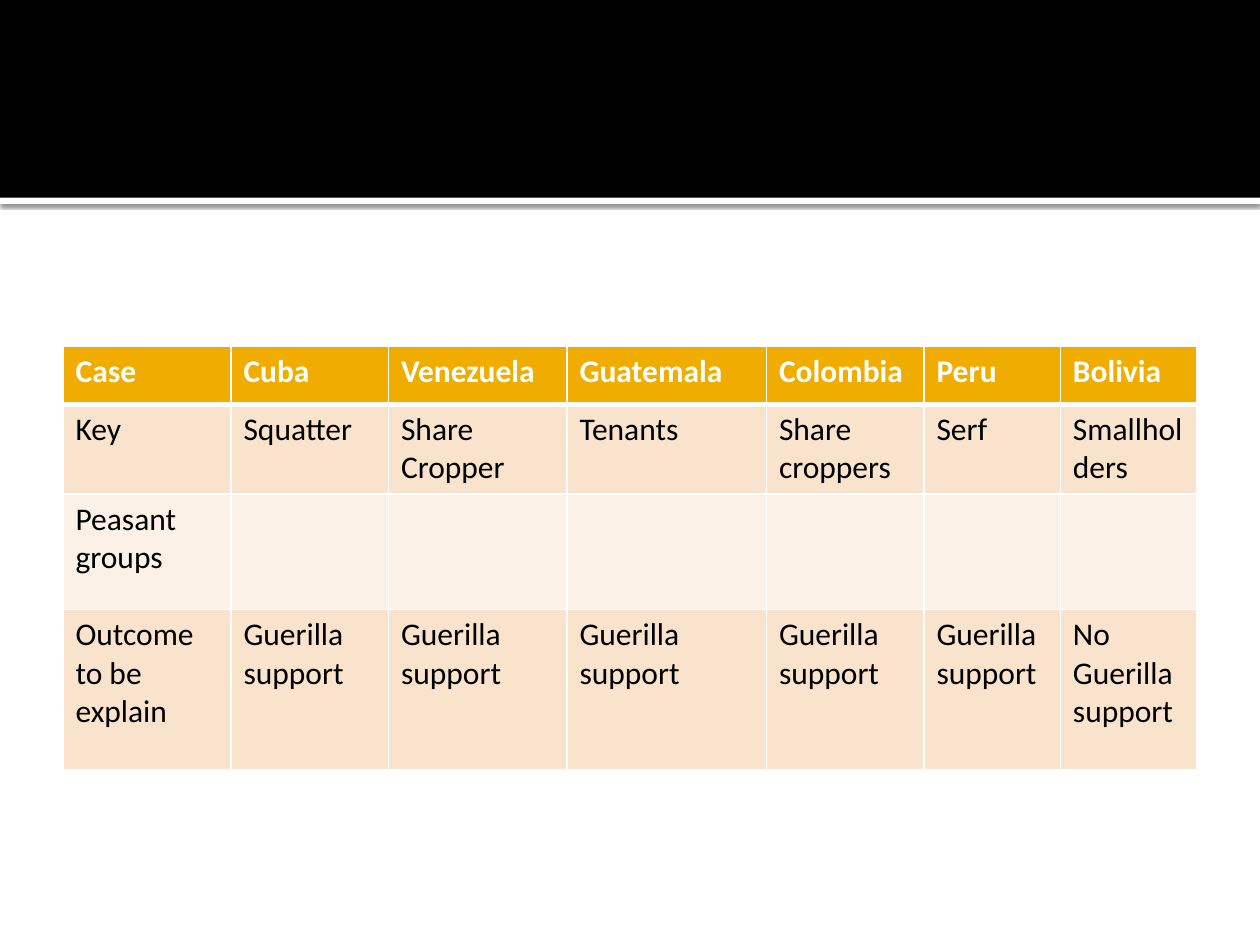
from lxml.etree import SubElement
from pptx import Presentation
from pptx.dml.color import RGBColor
from pptx.enum.shapes import MSO_SHAPE
from pptx.oxml.ns import qn
from pptx.util import Pt

WHITE = RGBColor(0xFF, 0xFF, 0xFF)
BLACK = RGBColor(0x00, 0x00, 0x00)
AMBER = RGBColor(0xF0, 0xAD, 0x00)
PEACH = RGBColor(0xF9, 0xE3, 0xCC)
CREAM = RGBColor(0xFC, 0xF1, 0xE7)

SUPPORT = "Guerilla\nsupport"
ROWS = [
    ["Case", "Cuba", "Venezuela", "Guatemala", "Colombia", "Peru", "Bolivia"],
    ["Key", "Squatter", "Share\nCropper", "Tenants", "Share\ncroppers", "Serf", "Smallholders"],
    ["Peasant\ngroups"] + [""] * 6,
    ["Outcome\nto be\nexplain"] + [SUPPORT] * 5 + ["No\n" + SUPPORT],
]
COL_WIDTHS = [96, 90, 102, 114, 90, 78, 78]
ROW_HEIGHTS = [33, 50.4, 66, 91.8]
ROW_FILLS = [AMBER, PEACH, CREAM, PEACH]


def add_bar(slide, x, y, w, h, color):
    """Add a plain filled rectangle."""
    s = slide.shapes.add_shape(MSO_SHAPE.RECTANGLE, Pt(x), Pt(y), Pt(w), Pt(h))
    s.shadow.inherit = False
    s.fill.solid()
    s.fill.fore_color.rgb = color
    s.line.fill.background()
    return s


def add_shadow(s, blur, dist, angle, alpha):
    """Give a shape an outer black shadow."""
    effects = s._element.spPr.find(qn("a:effectLst"))
    shadow = SubElement(effects, qn("a:outerShdw"), blurRad=str(Pt(blur)),
                        dist=str(Pt(dist)), dir=str(angle * 60000),
                        algn="tl", rotWithShape="0")
    color = SubElement(shadow, qn("a:srgbClr"), val=str(BLACK))
    SubElement(color, qn("a:alpha"), val=str(alpha * 1000))


def add_header(slide, x, y, w, h):
    """Draw the black title band with a shadowed white strip along its foot."""
    strip = 3.6
    edge = add_bar(slide, x, y + h - strip, w, strip, WHITE)
    add_shadow(edge, 2.5, 0.8, 90, 60)
    add_bar(slide, x, y, w, h - strip, BLACK)


def set_borders(cell, **widths):
    """Draw white cell borders of the given widths."""
    tcPr = cell._tc.get_or_add_tcPr()
    for side, width in widths.items():
        ln = SubElement(tcPr, qn(f"a:ln{side}"), w=str(Pt(width)))
        fill = SubElement(ln, qn("a:solidFill"))
        SubElement(fill, qn("a:srgbClr"), val=str(WHITE))


def fill_cell(cell, text, color, is_head, below_head):
    """Write and style one table cell."""
    set_borders(cell, L=1, R=1, T=3 if below_head else 1, B=3 if is_head else 1)
    cell.fill.solid()
    cell.fill.fore_color.rgb = color
    cell.text = text
    for p in cell.text_frame.paragraphs:
        p.font.name = "Calibri"
        p.font.size = Pt(18)
        p.font.bold = is_head
        p.font.color.rgb = WHITE if is_head else BLACK


def add_case_table(slide, x, y, w, h):
    """Add the table of peasant groups and outcomes by country."""
    table = slide.shapes.add_table(len(ROWS), len(COL_WIDTHS),
                                   Pt(x), Pt(y), Pt(w), Pt(h)).table
    for col, width in zip(table.columns, COL_WIDTHS):
        col.width = Pt(w * width / sum(COL_WIDTHS))
    for row, height in zip(table.rows, ROW_HEIGHTS):
        row.height = Pt(h * height / sum(ROW_HEIGHTS))
    for i, (texts, color) in enumerate(zip(ROWS, ROW_FILLS)):
        for j, text in enumerate(texts):
            fill_cell(table.cell(i, j), text, color, i == 0, i == 1)


def main():
    """Build and save the slide."""
    prs = Presentation()
    prs.slide_width, prs.slide_height = Pt(720), Pt(540)
    slide = prs.slides.add_slide(prs.slide_layouts[6])
    add_header(slide, 0, 0, 720, 116.6)
    add_case_table(slide, 36, 198, 648, 241.2)
    prs.save("out.pptx")


if __name__ == "__main__":
    main()
